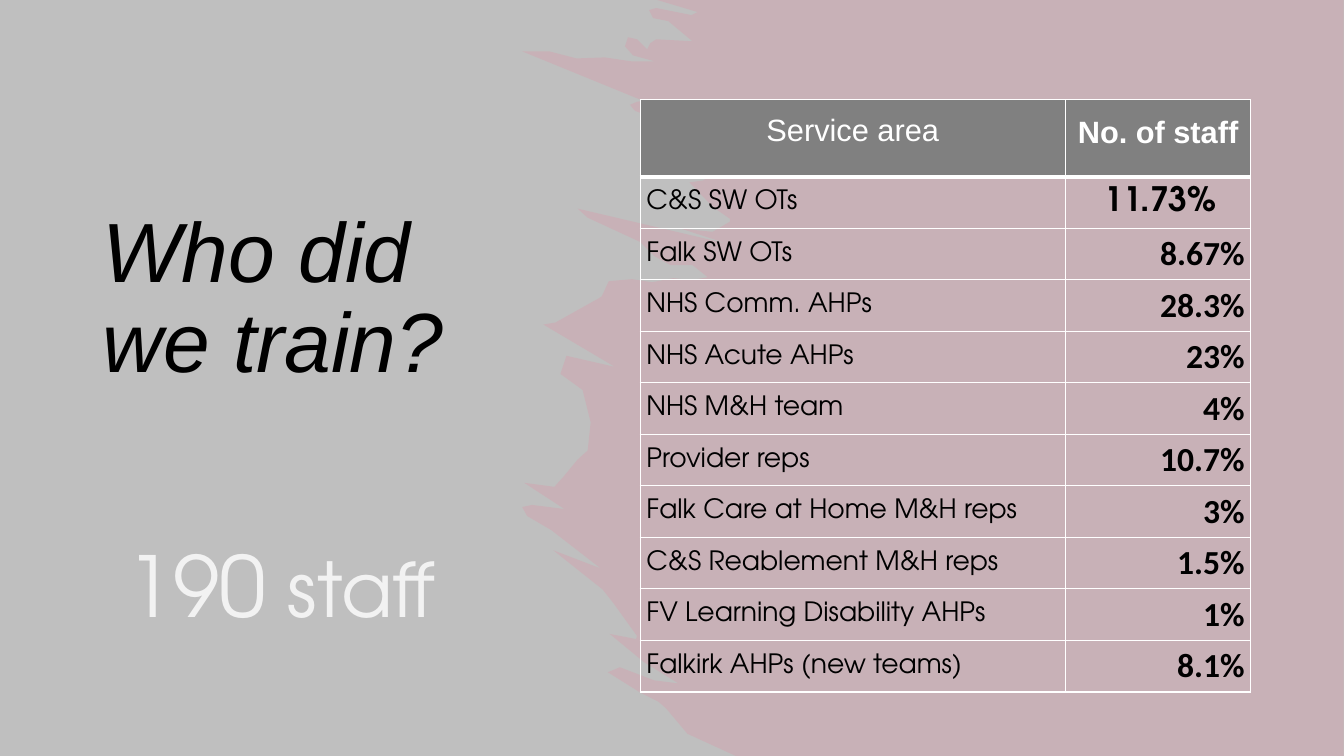
from dataclasses import dataclass
from typing import Optional

import pptx
import pptx.dml.color
import pptx.enum.dml
import pptx.enum.text
import pptx.oxml
import pptx.oxml.ns
import pptx.util
from lxml import etree

Pt = pptx.util.Pt
RGBColor = pptx.dml.color.RGBColor
Align = pptx.enum.text.PP_ALIGN
Anchor = pptx.enum.text.MSO_ANCHOR

GREY = RGBColor(0xBF, 0xBF, 0xBF)
HEADER_GREY = RGBColor(0x80, 0x80, 0x80)
PINK = RGBColor(0xF0, 0x7C, 0x98)
BLACK = RGBColor(0, 0, 0)
WHITE = RGBColor(0xFF, 0xFF, 0xFF)
OFF_WHITE = RGBColor(0xF2, 0xF2, 0xF2)

ROUND_FONT = "TeX Gyre Adventor"
CELL_MARGIN = 4.5

# Torn edge of the pink area, from bottom to top, in steps of 0.72 pt
EDGE_STEP = 0.72
TORN_EDGE = [
    (730, 750), (682, 728), (661, 703), (653, 696), (635, 687), (603, 667),
    (615, 662), (649, 675), (673, 678), (639, 657), (605, 629), (631, 634),
    (632, 631), (609, 599), (598, 585), (549, 546), (596, 564), (547, 526),
    (523, 512), (518, 503), (528, 501), (560, 505), (520, 479), (550, 483),
    (559, 473), (573, 456), (583, 447), (586, 419), (578, 387), (556, 371),
    (562, 353), (610, 364), (539, 322), (551, 320), (594, 296), (597, 294),
    (604, 279), (627, 277), (647, 280), (668, 276), (686, 278), (702, 275),
    (687, 263), (665, 263), (649, 254), (635, 240), (583, 216), (573, 207),
    (722, 242), (676, 227), (707, 230), (724, 220), (724, 217), (711, 208),
    (704, 202), (684, 181), (698, 179), (703, 175), (700, 168), (655, 149),
    (651, 135), (660, 132), (670, 133), (662, 122), (630, 110), (625, 104),
    (632, 101), (638, 100), (518, 51), (545, 51), (572, 58), (600, 57),
    (627, 61), (650, 61), (628, 55), (620, 46), (623, 37), (632, 39),
    (642, 49), (645, 43), (651, 39), (687, 41), (663, 21), (648, 18),
    (644, 10), (651, 8), (686, 15), (692, 12), (652, 0),
]


@dataclass
class StaffRow:
    area: str
    share: str
    share_font: str = "Calibri"
    right_margin: float = CELL_MARGIN


STAFF_ROWS = [
    StaffRow("C&S SW OTs", "11.73%", ROUND_FONT, 24.5),
    StaffRow("Falk SW OTs", "8.67%"),
    StaffRow("NHS Comm. AHPs", "28.3%"),
    StaffRow("NHS Acute AHPs", "23%"),
    StaffRow("NHS M&H team", "4%"),
    StaffRow("Provider reps", "10.7%"),
    StaffRow("Falk Care at Home M&H reps", "3%"),
    StaffRow("C&S Reablement M&H reps", "1.5%"),
    StaffRow("FV Learning Disability AHPs", "1%"),
    StaffRow("Falkirk AHPs (new teams)", "8.1%"),
]


def write_text(paragraph, text: str, *, size: float, font: str, color: RGBColor,
               bold: bool = False, italic: bool = False,
               align: Align = Align.LEFT, line_spacing: Optional[float] = None) -> None:
    """Append formatted text; a new line in it becomes a line break."""
    for index, line in enumerate(text.split("\n")):
        if index:
            paragraph.add_line_break()
        run = paragraph.add_run()
        run.text = line
        run.font.size = Pt(size)
        run.font.name = font
        run.font.color.rgb = color
        run.font.bold = bold
        run.font.italic = italic
    paragraph.alignment = align
    if line_spacing:
        paragraph.line_spacing = line_spacing


def add_text_box(slide, left: float, top: float, width: float, height: float,
                 anchor: Anchor = Anchor.TOP):
    """Add a wrapping text box and return its first paragraph."""
    shape = slide.shapes.add_textbox(Pt(left), Pt(top), Pt(width), Pt(height))
    shape.text_frame.word_wrap = True
    shape.text_frame.vertical_anchor = anchor
    return shape.text_frame.paragraphs[0]


def set_borders(cell, top: float = 1, bottom: float = 1) -> None:
    """Draw white borders; they must come before the fill in the cell properties."""
    properties = cell._tc.get_or_add_tcPr()
    widths = {"lnL": 1, "lnR": 1, "lnT": top, "lnB": bottom}
    for position, (tag, width) in enumerate(widths.items()):
        line = pptx.oxml.parse_xml(
            f'<a:{tag} {pptx.oxml.ns.nsdecls("a")} w="{Pt(width)}">'
            f'<a:solidFill><a:srgbClr val="{WHITE}"/></a:solidFill></a:{tag}>')
        properties.insert(position, line)


def format_cell(cell, *, top: float = 0, right: float = CELL_MARGIN,
                anchor: Anchor = Anchor.MIDDLE):
    """Set margins and anchor, and return the cell's paragraph."""
    cell.margin_left, cell.margin_right = Pt(CELL_MARGIN), Pt(right)
    cell.margin_top, cell.margin_bottom = Pt(top), Pt(0)
    cell.vertical_anchor = anchor
    return cell.text_frame.paragraphs[0]


def add_pink_area(slide) -> None:
    builder = slide.shapes.build_freeform(1333, 0, scale=Pt(EDGE_STEP))
    builder.add_line_segments([(1333, 750), *TORN_EDGE], close=True)
    shape = builder.convert_to_shape()
    shape.shadow.inherit = False
    shape.line.fill.background()
    shape.fill.solid()
    shape.fill.fore_color.rgb = PINK
    color = shape._element.spPr.find(".//" + pptx.oxml.ns.qn("a:srgbClr"))
    etree.SubElement(color, pptx.oxml.ns.qn("a:alpha"), val="20000")


def add_staff_table(slide) -> None:
    header_height, row_height = 55, 36.8
    column_widths = (303.75, 132.5)
    frame = slide.shapes.add_table(
        len(STAFF_ROWS) + 1, 2, Pt(457.25), Pt(71.3), Pt(sum(column_widths)),
        Pt(header_height + row_height * len(STAFF_ROWS)))
    table = frame.table
    table.first_row = table.horz_banding = False
    for column, width in zip(table.columns, column_widths):
        column.width = Pt(width)

    # Header
    table.rows[0].height = Pt(header_height)
    headers = [("Service area", False, 9.5), ("No. of staff", True, 11.5)]
    for cell, (text, bold, top) in zip(table.rows[0].cells, headers):
        paragraph = format_cell(cell, top=top, anchor=Anchor.TOP)
        write_text(paragraph, text, size=22, font="Arial", color=WHITE,
                   bold=bold, align=Align.CENTER)
        cell.fill.solid()
        cell.fill.fore_color.rgb = HEADER_GREY
        set_borders(cell, bottom=3)

    # Service areas
    for index, staff in enumerate(STAFF_ROWS, start=1):
        table.rows[index].height = Pt(row_height)
        area_cell, share_cell = table.rows[index].cells
        write_text(format_cell(area_cell), staff.area, size=19, font=ROUND_FONT,
                   color=BLACK)
        write_text(format_cell(share_cell, right=staff.right_margin), staff.share,
                   size=24, font=staff.share_font, color=BLACK, bold=True,
                   align=Align.RIGHT)
        for cell in (area_cell, share_cell):
            cell.fill.background()
            set_borders(cell, top=3 if index == 1 else 1)


def main() -> None:
    presentation = pptx.Presentation()
    presentation.slide_width, presentation.slide_height = Pt(960), Pt(540)
    slide = presentation.slides.add_slide(presentation.slide_layouts[6])
    slide.background.fill.solid()
    slide.background.fill.fore_color.rgb = GREY

    add_pink_area(slide)

    # Title
    title = add_text_box(slide, 66.25, 50.4, 429, 232.5, Anchor.BOTTOM)
    write_text(title, "Who did\nwe train?", size=60, font="Arial", color=BLACK,
               italic=True, line_spacing=0.9)

    add_staff_table(slide)

    # Total
    total = add_text_box(slide, 83.5, 377.3, 321, 80)
    write_text(total, "190", size=60, font=ROUND_FONT, color=OFF_WHITE)
    write_text(total, " staff", size=54, font=ROUND_FONT, color=OFF_WHITE)

    presentation.save("out.pptx")


if __name__ == "__main__":
    main()
